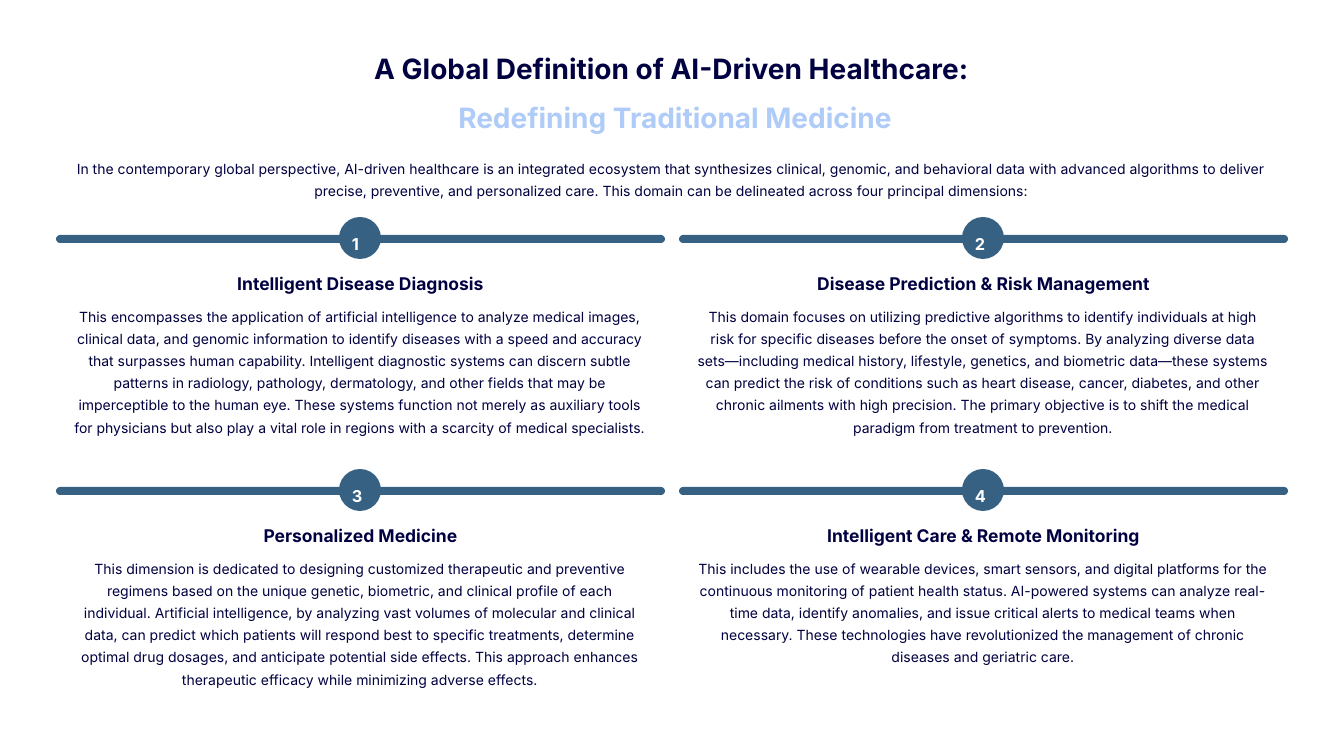
from pptx import Presentation
from pptx.dml.color import RGBColor
from pptx.enum.shapes import MSO_SHAPE as Preset
from pptx.enum.text import MSO_ANCHOR as Anchor, MSO_AUTO_SIZE as AutoSize, PP_ALIGN as Align
from pptx.util import Emu, Pt

EMU_PER_PX = 914400 / 84
FONT = "Inter"
COLORS = {"ink": "010141", "accent": "AFCBF8", "steel": "366183", "white": "FFFFFF"}

INTRO = (
    "In the contemporary global perspective, AI-driven healthcare is an integrated ecosystem "
    "that synthesizes clinical, genomic, and behavioral data with advanced algorithms to deliver "
    "precise, preventive, and personalized care. This domain can be delineated across four "
    "principal dimensions:"
)
DIMENSIONS = [
    (
        "Intelligent Disease Diagnosis",
        "This encompasses the application of artificial intelligence to analyze medical images, "
        "clinical data, and genomic information to identify diseases with a speed and accuracy "
        "that surpasses human capability. Intelligent diagnostic systems can discern subtle "
        "patterns in radiology, pathology, dermatology, and other fields that may be "
        "imperceptible to the human eye. These systems function not merely as auxiliary tools "
        "for physicians but also play a vital role in regions with a scarcity of medical "
        "specialists.",
    ),
    (
        "Disease Prediction & Risk Management",
        "This domain focuses on utilizing predictive algorithms to identify individuals at high "
        "risk for specific diseases before the onset of symptoms. By analyzing diverse data "
        "sets—including medical history, lifestyle, genetics, and biometric data—these systems "
        "can predict the risk of conditions such as heart disease, cancer, diabetes, and other "
        "chronic ailments with high precision. The primary objective is to shift the medical "
        "paradigm from treatment to prevention.",
    ),
    (
        "Personalized Medicine",
        "This dimension is dedicated to designing customized therapeutic and preventive "
        "regimens based on the unique genetic, biometric, and clinical profile of each "
        "individual. Artificial intelligence, by analyzing vast volumes of molecular and "
        "clinical data, can predict which patients will respond best to specific treatments, "
        "determine optimal drug dosages, and anticipate potential side effects. This approach "
        "enhances therapeutic efficacy while minimizing adverse effects.",
    ),
    (
        "Intelligent Care & Remote Monitoring",
        "This includes the use of wearable devices, smart sensors, and digital platforms for "
        "the continuous monitoring of patient health status. AI-powered systems can analyze "
        "real-time data, identify anomalies, and issue critical alerts to medical teams when "
        "necessary. These technologies have revolutionized the management of chronic diseases "
        "and geriatric care.",
    ),
]


def px(length):
    return Emu(round(length * EMU_PER_PX))


def write(frame, text, size=12, leading=19, color="ink", bold=False, align=Align.CENTER):
    frame.margin_left = frame.margin_right = frame.margin_top = frame.margin_bottom = 0
    frame.word_wrap = True
    frame.auto_size = AutoSize.NONE
    frame.vertical_anchor = Anchor.TOP
    paragraph = frame.paragraphs[0]
    paragraph.alignment = align
    paragraph.line_spacing = Pt(leading)
    run = paragraph.add_run()
    run.text = text
    run.font.name = FONT
    run.font.size = Pt(size)
    run.font.bold = bold
    run.font.color.rgb = RGBColor.from_string(COLORS[color])


class Board:
    def __init__(self, deck):
        self.slide = deck.slides.add_slide(deck.slide_layouts[5])

    def title(self, text, left, top, width, height, **style):
        heading = self.slide.shapes.title
        heading.left, heading.top = px(left), px(top)
        heading.width, heading.height = px(width), px(height)
        write(heading.text_frame, text, **style)

    def text(self, text, left, top, width, height, **style):
        box = self.slide.shapes.add_textbox(px(left), px(top), px(width), px(height))
        write(box.text_frame, text, **style)

    def pill(self, left, top, width, height, color="steel"):
        pill = self.slide.shapes.add_shape(
            Preset.ROUNDED_RECTANGLE, px(left), px(top), px(width), px(height)
        )
        pill.adjustments[0] = 0.5
        pill.shadow.inherit = False
        pill.fill.solid()
        pill.fill.fore_color.rgb = RGBColor.from_string(COLORS[color])
        pill.line.fill.background()

    def dimension(self, number, name, description, left, top):
        self.pill(left, top + 18, 609, 8)
        self.pill(left + 283, top, 42, 42)
        self.text(str(number), left + 296, top + 10, 17, 21,
                  size=14, leading=23, color="white", bold=True, align=Align.LEFT)
        self.text(name, left, top + 55, 609, 22, size=15, leading=18.5, bold=True)
        self.text(description, left + 16, top + 86, 576, 135)


def main():
    deck = Presentation()
    deck.slide_width, deck.slide_height = px(1344), px(756)
    board = Board(deck)
    headline = {"size": 24, "leading": 30, "bold": True}
    board.title("A Global Definition of AI-Driven Healthcare:", 363, 50, 617, 35, **headline)
    board.text("Redefining Traditional Medicine", 454, 99, 442, 35, color="accent", **headline)
    board.text(INTRO, 56, 155, 1231, 45)
    for index, (name, description) in enumerate(DIMENSIONS):
        row, column = divmod(index, 2)
        board.dimension(index + 1, name, description, 56 + 623 * column, 217 + 252 * row)
    deck.save("out.pptx")


if __name__ == "__main__":
    main()
